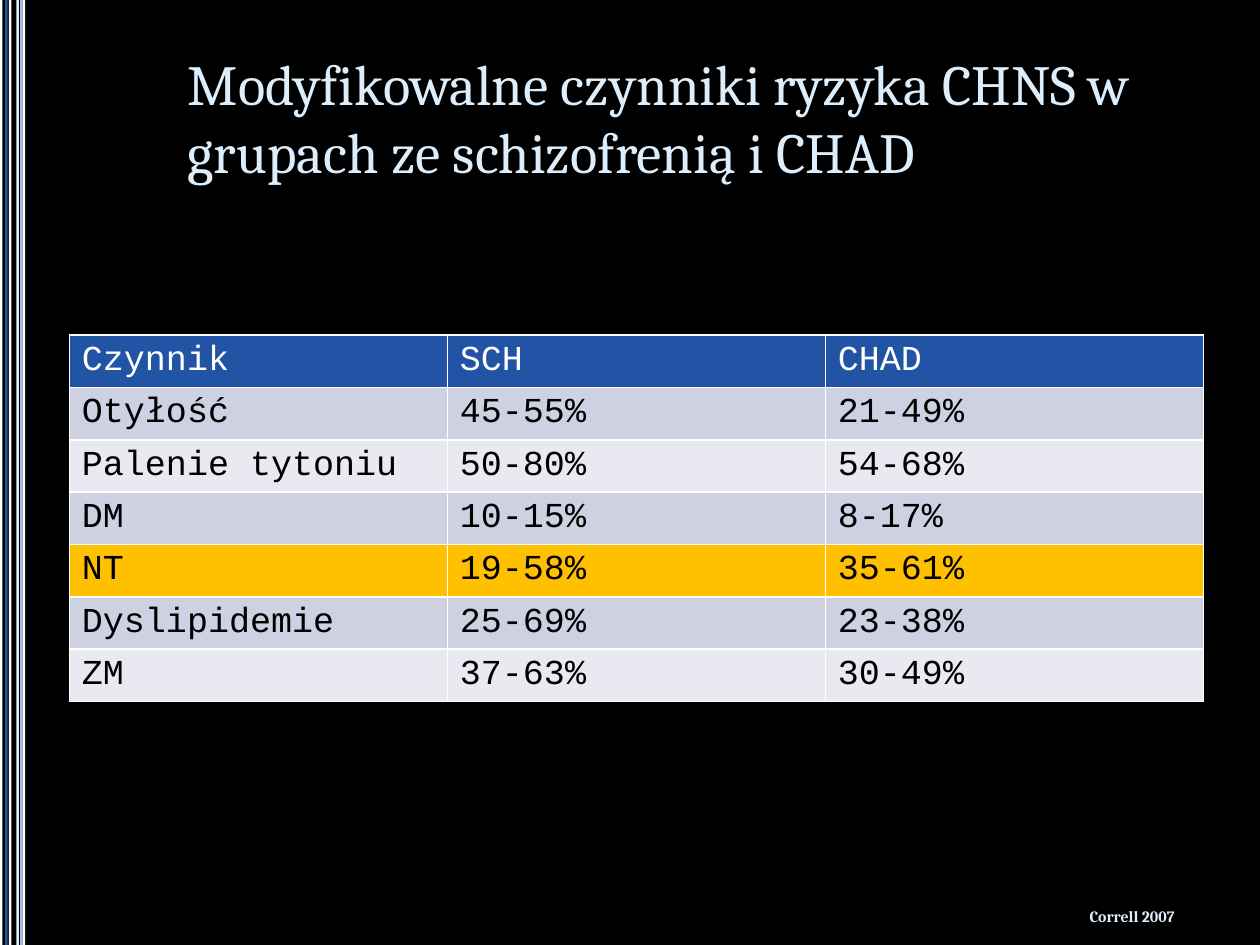
import dataclasses
import pptx
import pptx.dml.color
import pptx.enum.shapes
import pptx.enum.text
import pptx.oxml
import pptx.oxml.ns
import pptx.util

Inches = pptx.util.Inches
Pt = pptx.util.Pt
ALIGN = pptx.enum.text.PP_ALIGN
MIDDLE = pptx.enum.text.MSO_ANCHOR.MIDDLE

HUES = {
    "black": "000000", "white": "FFFFFF", "blue": "2254A6",
    "sky": "9FC6E9", "ice": "E0EDF8", "title": "DCEDFC",
    "dark": "CDD1E1", "light": "E8E9F1", "gold": "FFC000",
}


@dataclasses.dataclass
class Stripe:
    left: float
    width: float
    hue: str


@dataclasses.dataclass
class Row:
    cells: tuple[str, str, str]
    fill: str
    ink: str = "black"


STRIPES = [
    Stripe(0, 0.02, "white"),
    Stripe(0.07, 0.02, "white"),
    Stripe(0.11, 0.01, "black"),
    Stripe(0.13, 0.02, "ice"),
    Stripe(0.16, 0.02, "sky"),
    Stripe(0.18, 0.02, "white"),
    Stripe(0.04, 0.02, "blue"),
]

ROWS = [
    Row(("Czynnik", "SCH", "CHAD"), "blue", "white"),
    Row(("Otyłość", "45-55%", "21-49%"), "dark"),
    Row(("Palenie tytoniu", "50-80%", "54-68%"), "light"),
    Row(("DM", "10-15%", "8-17%"), "dark"),
    Row(("NT", "19-58%", "35-61%"), "gold"),
    Row(("Dyslipidemie", "25-69%", "23-38%"), "dark"),
    Row(("ZM", "37-63%", "30-49%"), "light"),
]


def paint(fill, hue: str) -> None:
    fill.solid()
    fill.fore_color.rgb = pptx.dml.color.RGBColor.from_string(HUES[hue])


def style(par, face: str, size: float, hue: str, bold: bool = False) -> None:
    par.font.name = face
    par.font.size = Pt(size)
    par.font.bold = bold
    paint(par.font.fill, hue)


def add_stripe(slide, stripe: Stripe) -> None:
    shape = slide.shapes.add_shape(
        pptx.enum.shapes.MSO_SHAPE.RECTANGLE,
        Inches(stripe.left), 0, Inches(stripe.width), Inches(7.5))
    shape.shadow.inherit = False
    shape.line.fill.background()
    paint(shape.fill, stripe.hue)


def set_title(slide, text: str) -> None:
    title = slide.shapes.title
    title.left, title.top = Inches(1.29), Inches(0.3)
    title.width, title.height = Inches(8.2), Inches(1.25)
    frame = title.text_frame
    frame.text = text
    frame.word_wrap = True
    frame.auto_size = pptx.enum.text.MSO_AUTO_SIZE.NONE
    frame.vertical_anchor = MIDDLE
    frame.margin_left = frame.margin_right = Inches(0.2)
    frame.margin_top = frame.margin_bottom = Inches(0.2)
    par = frame.paragraphs[0]
    par.alignment = ALIGN.LEFT
    style(par, "Cambria", 32.4, "title")


def add_edges(cell) -> None:
    props = cell._tc.get_or_add_tcPr()
    for spot, side in enumerate(("lnL", "lnR", "lnT", "lnB")):
        props.insert(spot, pptx.oxml.parse_xml(
            f'<a:{side} {pptx.oxml.ns.nsdecls("a")} w="{Pt(1)}"><a:solidFill>'
            f'<a:srgbClr val="{HUES["white"]}"/></a:solidFill></a:{side}>'))


def add_grid(slide, rows: list[Row]) -> None:
    table = slide.shapes.add_table(
        len(rows), 3, Inches(0.55), Inches(2.66),
        Inches(9), Inches(0.41 * len(rows))).table
    for line, row in zip(table.rows, rows):
        line.height = Inches(0.41)
        for cell, text in zip(line.cells, row.cells):
            cell.text = text
            paint(cell.fill, row.fill)
            add_edges(cell)
            style(cell.text_frame.paragraphs[0], "Courier New", 20, row.ink)


def add_credit(slide, text: str) -> None:
    frame = slide.shapes.add_textbox(
        Inches(6.25), Inches(7.12), Inches(3.17), Inches(0.3)).text_frame
    frame.text = text
    frame.word_wrap = True
    frame.vertical_anchor = MIDDLE
    par = frame.paragraphs[0]
    par.alignment = ALIGN.RIGHT
    style(par, "Cambria", 9, "ice", True)


def main() -> None:
    deck = pptx.Presentation()
    deck.slide_width, deck.slide_height = Inches(10), Inches(7.5)
    slide = deck.slides.add_slide(deck.slide_layouts[5])
    paint(slide.background.fill, "black")
    for stripe in STRIPES:
        add_stripe(slide, stripe)
    set_title(slide, "Modyfikowalne czynniki ryzyka CHNS w grupach ze schizofrenią i CHAD")
    add_grid(slide, ROWS)
    add_credit(slide, "Correll 2007")
    deck.save("out.pptx")


if __name__ == "__main__":
    main()
